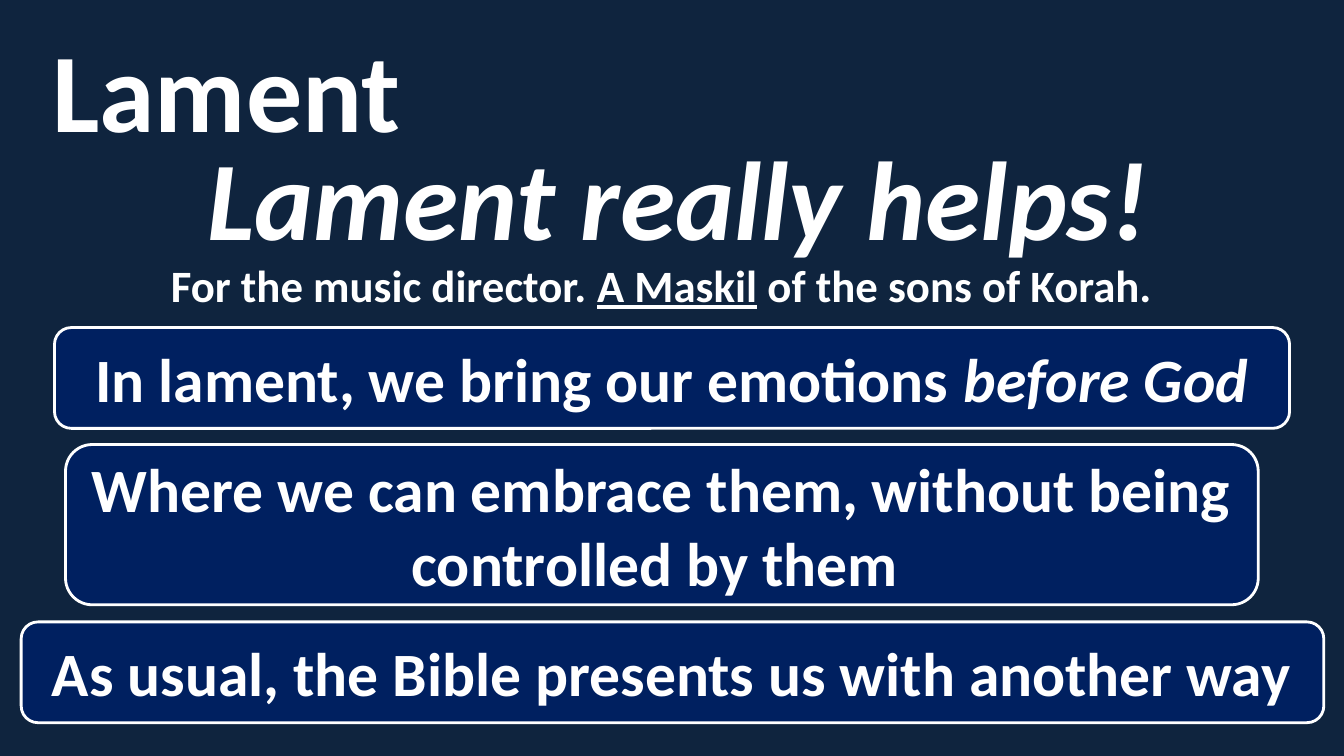
from pptx import Presentation
from pptx.dml.color import RGBColor
from pptx.enum.shapes import MSO_SHAPE
from pptx.enum.text import MSO_ANCHOR, MSO_AUTO_SIZE, PP_ALIGN
from pptx.util import Inches, Pt

COLORS = {"background": "0F243E", "panel": "002060", "white": "FFFFFF"}
FONT = "Calibri"


def color(name):
    return RGBColor.from_string(COLORS[name])


def write_text(shape, *runs, size=44, align=PP_ALIGN.CENTER):
    """Each run is a string or a (string, font flags) pair."""
    frame = shape.text_frame
    frame.word_wrap = True
    frame.auto_size = MSO_AUTO_SIZE.NONE
    frame.vertical_anchor = MSO_ANCHOR.MIDDLE
    paragraph = frame.paragraphs[0]
    paragraph.alignment = align
    for item in runs:
        text, flags = (item, {}) if isinstance(item, str) else item
        run = paragraph.add_run()
        run.text = text
        run.font.name = FONT
        run.font.size = Pt(size)
        run.font.bold = True
        run.font.italic = flags.get("italic", False)
        run.font.underline = flags.get("underline", False)
        run.font.color.rgb = color("white")


class LamentSlide:
    def __init__(self, presentation):
        self.slide = presentation.slides.add_slide(presentation.slide_layouts[5])
        fill = self.slide.background.fill
        fill.solid()
        fill.fore_color.rgb = color("background")

    def title(self, text, left, top, width, height):
        shape = self.slide.shapes.title
        shape.left, shape.top = Inches(left), Inches(top)
        shape.width, shape.height = Inches(width), Inches(height)
        write_text(shape, text, size=80, align=PP_ALIGN.LEFT)

    def panel(self, left, top, width, height, *runs, size=44, filled=True):
        shape = self.slide.shapes.add_shape(
            MSO_SHAPE.ROUNDED_RECTANGLE,
            Inches(left), Inches(top), Inches(width), Inches(height))
        shape.shadow.inherit = False
        if filled:
            shape.fill.solid()
            shape.fill.fore_color.rgb = color("panel")
            shape.line.color.rgb = color("white")
            shape.line.width = Pt(2)
        else:
            shape.fill.background()
            shape.line.fill.background()
        write_text(shape, *runs, size=size)

    def caption(self, left, top, width, height, *runs, size=32):
        box = self.slide.shapes.add_textbox(
            Inches(left), Inches(top), Inches(width), Inches(height))
        write_text(box, *runs, size=size)


def main():
    presentation = Presentation()
    presentation.slide_width = Inches(13.33)
    presentation.slide_height = Inches(7.5)
    lament = LamentSlide(presentation)

    # Title
    lament.title("Lament", 0.42, 0.25, 3.83, 1.25)

    # Main points
    lament.panel(0.54, 3.25, 12.25, 1, "In lament, we bring our emotions ",
                 ("before God", {"italic": True}))
    lament.panel(0.65, 4.41, 11.83, 1.59,
                 "Where we can embrace them, without being controlled by them ")

    # Unfilled headline
    lament.panel(0.54, 1.5, 12.37, 0.88,
                 ("Lament really helps!", {"italic": True}), size=80, filled=False)

    # Closing point
    lament.panel(0.21, 6.17, 12.92, 1,
                 "As usual, the Bible presents us with another way")

    # Psalm heading
    lament.caption(1.5, 2.2, 10.12, 1.25, "For the music director. ",
                   ("A Maskil", {"underline": True}), " of the sons of Korah.")

    presentation.save("out.pptx")


if __name__ == "__main__":
    main()
